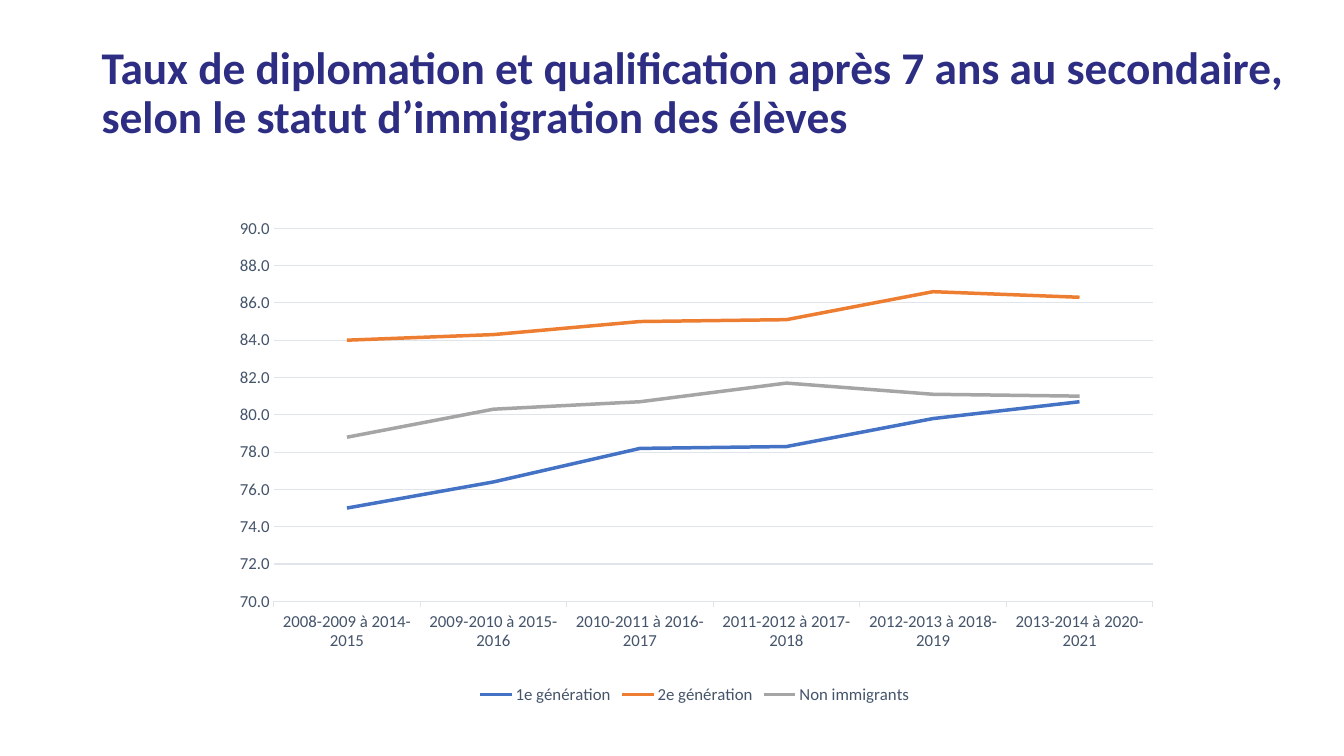
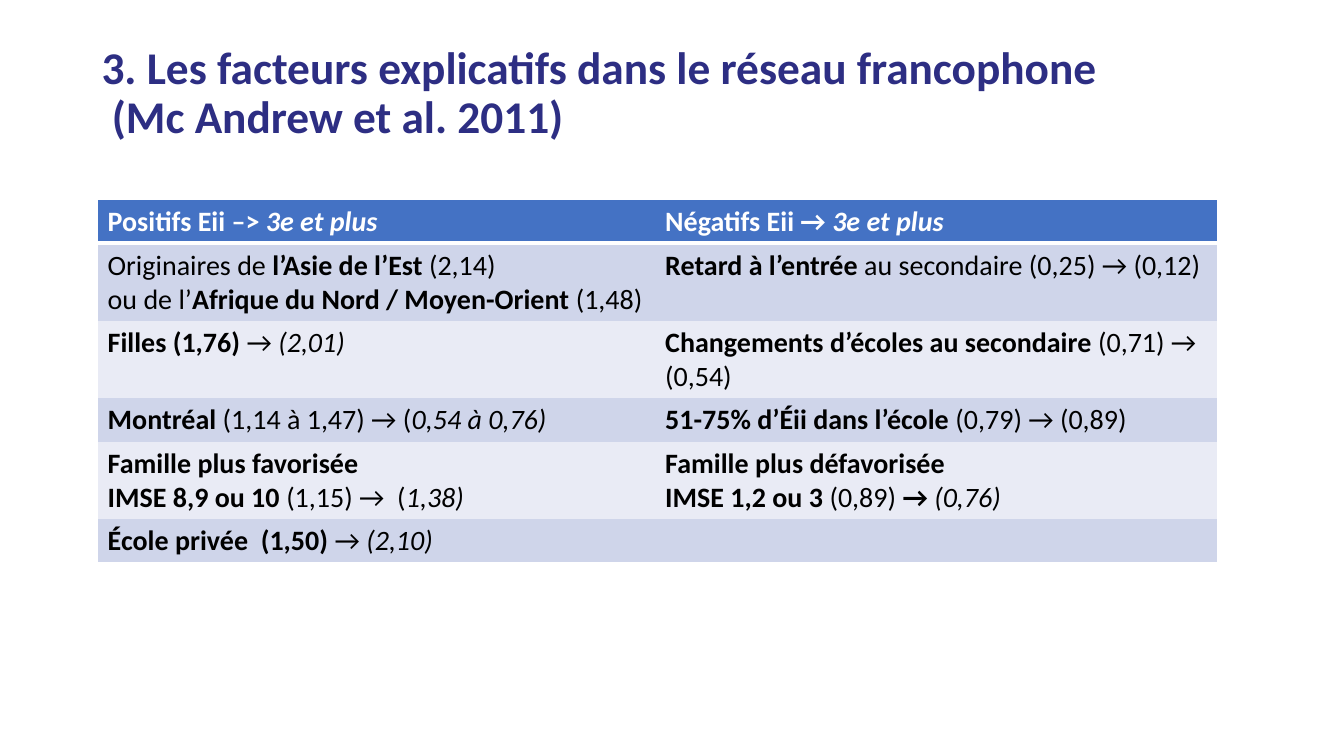
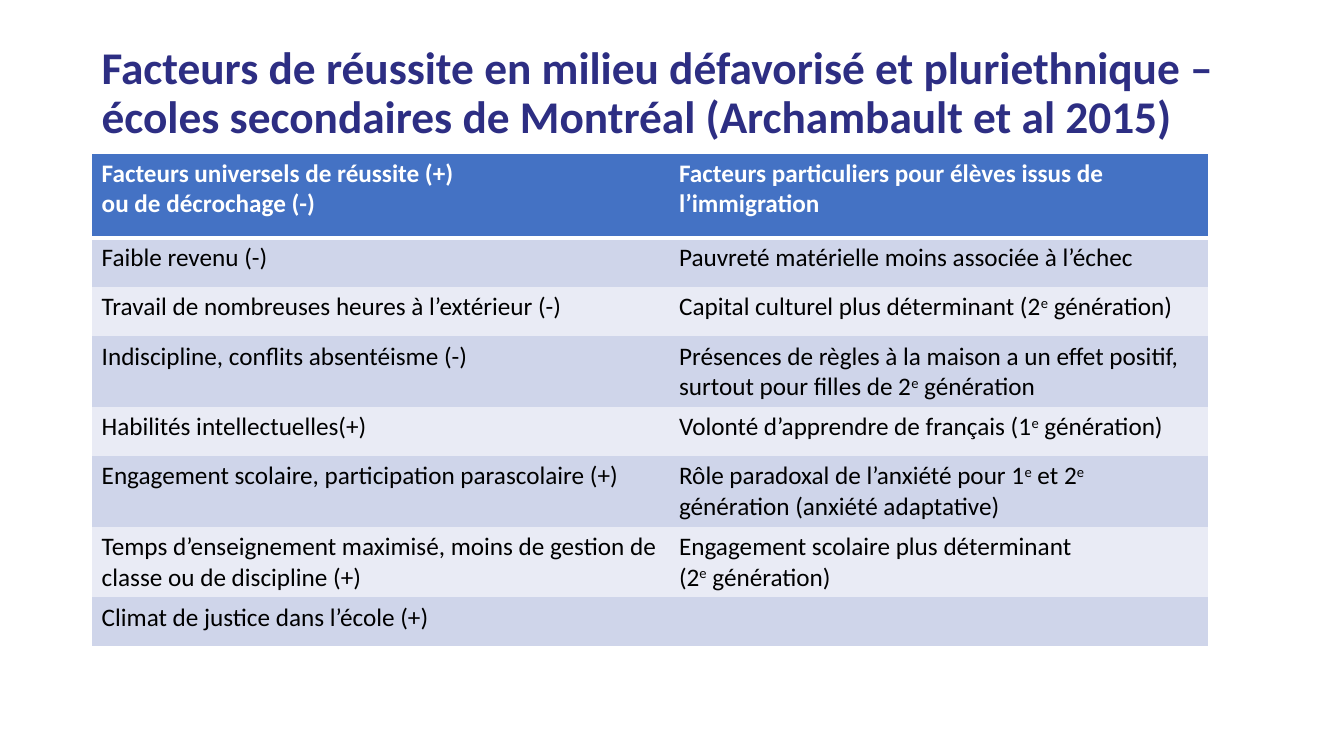
from dataclasses import dataclass
from typing import NamedTuple

import pptx
import pptx.chart.data
import pptx.dml.color
import pptx.enum.chart
import pptx.enum.text
import pptx.oxml
import pptx.oxml.ns
import pptx.util
from lxml import etree
from pptx.util import Cm, Pt

RGBColor = pptx.dml.color.RGBColor
qn = pptx.oxml.ns.qn

# Shared style
FONT = "Calibri"
INDIGO = RGBColor(0x2D, 0x2E, 0x83)
BLUE = RGBColor(0x44, 0x72, 0xC4)
ORANGE = RGBColor(0xED, 0x7D, 0x31)
GREY = RGBColor(0xA5, 0xA5, 0xA5)
SLATE = RGBColor(0x44, 0x54, 0x6A)
GRID = RGBColor(0xE0, 0xE5, 0xEB)
BAND_DARK = RGBColor(0xCF, 0xD5, 0xEA)
BAND_LIGHT = RGBColor(0xE9, 0xEB, 0xF5)
WHITE = RGBColor(0xFF, 0xFF, 0xFF)
BLACK = RGBColor(0, 0, 0)
TITLE_LEFT, TITLE_BOTTOM = Cm(2.31), Cm(3.73)
NO_TABLE_STYLE = "{2D5ABB26-0587-4C30-8999-92F81FD0307C}"


class Run(NamedTuple):
    text: str
    bold: bool = False
    italic: bool = False
    raised: bool = False


def bold(text: str) -> Run:
    return Run(text, bold=True)


def italic(text: str) -> Run:
    return Run(text, italic=True)


RANK = Run("e", raised=True)
Paragraph = list[Run]
Cell = list[Paragraph]


@dataclass
class TableSpec:
    left: float
    top: float
    column_widths: list[float]
    header_height: float
    row_height: float
    size: int
    rows: list[list[Cell]]


class Line(NamedTuple):
    name: str
    values: list[float]
    color: RGBColor


# Content
PERIODS = ["2008-2009 à 2014-2015", "2009-2010 à 2015-2016", "2010-2011 à 2016-2017",
           "2011-2012 à 2017-2018", "2012-2013 à 2018-2019", "2013-2014 à 2020-2021"]
RATES = [
    Line("1e génération", [75, 76.4, 78.2, 78.3, 79.8, 80.7], BLUE),
    Line("2e génération", [84, 84.3, 85, 85.1, 86.6, 86.3], ORANGE),
    Line("Non immigrants", [78.8, 80.3, 80.7, 81.7, 81.1, 81], GREY),
]

EXPLANATORY_FACTORS = TableSpec(2.46, 5.03, [14.05, 14.17], 1.04, 1.04, 20, [
    [[[Run("Positifs Eii –> "), italic("3e et plus")]],
     [[Run("Négatifs Eii → "), italic("3e et plus")]]],
    [[[Run("Originaires de "), bold("l’Asie de l’Est "), Run("(2,14)")],
      [Run("ou de l’"), bold("Afrique du Nord / Moyen-Orient "), Run("(1,48)")]],
     [[bold("Retard à l’entrée "), Run("au secondaire (0,25) → (0,12)")]]],
    [[[bold("Filles (1,76) "), Run("→"), italic(" (2,01)")]],
     [[bold("Changements d’écoles au secondaire "), Run("(0,71) → (0,54)")]]],
    [[[bold("Montréal"), Run(" (1,14 à 1,47) → ("), italic("0,54 à 0,76)")]],
     [[bold("51-75% d’Éii dans l’école "), Run("(0,79) → (0,89)")]]],
    [[[bold("Famille plus favorisée\nIMSE 8,9 ou 10 "), Run("(1,15) →  ("), italic("1,38)")]],
     [[bold("Famille plus défavorisée\nIMSE 1,2 ou 3 "), Run("(0,89) "), bold("→ "),
       italic("(0,76)")]]],
    [[[bold("École privée  (1,50) "), Run("→"), italic(" (2,10)")]], [[]]],
])

SUCCESS_FACTORS = TableSpec(2.31, 3.86, [14.55, 13.61], 2.13, 1.24, 18, [
    [[[Run("Facteurs universels de réussite (+)\nou de décrochage (-)")]],
     [[Run("Facteurs particuliers pour élèves issus de l’immigration")]]],
    [[[Run("Faible revenu (-)")]],
     [[Run("Pauvreté matérielle moins associée à l’échec")]]],
    [[[Run("Travail de nombreuses heures à l’extérieur (-)")]],
     [[Run("Capital culturel plus déterminant (2"), RANK, Run(" génération)")]]],
    [[[Run("Indiscipline, conflits absentéisme (-)")]],
     [[Run("Présences de règles à la maison a un effet positif, surtout pour filles de 2"),
       RANK, Run(" génération")]]],
    [[[Run("Habilités intellectuelles(+)")]],
     [[Run("Volonté d’apprendre de français (1"), RANK, Run(" génération)")]]],
    [[[Run("Engagement scolaire, participation parascolaire (+)")]],
     [[Run("Rôle paradoxal de l’anxiété pour 1"), RANK, Run(" et 2"), RANK,
       Run(" génération (anxiété adaptative)")]]],
    [[[Run("Temps d’enseignement maximisé, moins de gestion de classe ou de discipline (+)")]],
     [[Run("Engagement scolaire plus déterminant\n(2"), RANK, Run(" génération)")]]],
    [[[Run("Climat de justice dans l’école (+)")]], [[]]],
])


# Text
def style_font(font, size: float, color: RGBColor) -> None:
    font.name = FONT
    font.size = Pt(size)
    font.color.rgb = color


def write_runs(paragraph, runs: Paragraph, size: float, color: RGBColor,
               all_bold: bool = False) -> None:
    for part in runs:
        for index, text in enumerate(part.text.split("\n")):
            if index:
                paragraph.add_line_break()
            run = paragraph.add_run()
            run.text = text
            style_font(run.font, size, color)
            run.font.bold = all_bold or part.bold
            run.font.italic = part.italic
            if part.raised:
                run.font._element.set("baseline", "30000")


def add_titled_slide(deck, title: str, width: float = 29.21, height: float = 1.52):
    slide = deck.slides.add_slide(deck.slide_layouts[6])
    box = slide.shapes.add_textbox(TITLE_LEFT, TITLE_BOTTOM - Cm(height), Cm(width), Cm(height))
    frame = box.text_frame
    frame.word_wrap = True
    frame.vertical_anchor = pptx.enum.text.MSO_ANCHOR.BOTTOM
    frame.paragraphs[0].line_spacing = 0.9
    write_runs(frame.paragraphs[0], [bold(title)], 32.4, INDIGO)
    return slide


# Tables
def add_borders(cell, widths: dict[str, int]) -> None:
    properties = cell._tc.get_or_add_tcPr()
    for position, side in enumerate(s for s in "LRTB" if s in widths):
        border = etree.Element(qn(f"a:ln{side}"), w=str(Pt(widths[side])))
        fill = etree.SubElement(border, qn("a:solidFill"))
        etree.SubElement(fill, qn("a:srgbClr"), val=str(WHITE))
        properties.insert(position, border)


def add_factor_table(slide, spec: TableSpec) -> None:
    row_count, column_count = len(spec.rows), len(spec.column_widths)
    heights = [spec.header_height] + [spec.row_height] * (row_count - 1)
    table = slide.shapes.add_table(row_count, column_count, Cm(spec.left), Cm(spec.top),
                                   Cm(sum(spec.column_widths)), Cm(sum(heights))).table
    table._tbl.tblPr.find(qn("a:tableStyleId")).text = NO_TABLE_STYLE
    for column, width in zip(table.columns, spec.column_widths):
        column.width = Cm(width)
    for row_index, (contents, height) in enumerate(zip(spec.rows, heights)):
        table.rows[row_index].height = Cm(height)
        is_header = row_index == 0
        band = BLUE if is_header else BAND_DARK if row_index % 2 else BAND_LIGHT
        for column_index, paragraphs in enumerate(contents):
            cell = table.cell(row_index, column_index)
            cell.fill.solid()
            cell.fill.fore_color.rgb = band
            for index, runs in enumerate(paragraphs):
                frame = cell.text_frame
                paragraph = frame.add_paragraph() if index else frame.paragraphs[0]
                write_runs(paragraph, runs, spec.size, WHITE if is_header else BLACK, is_header)
            # White outer edge, thick rule under the header
            borders = {"L" if column_index == 0 else "R": 1}
            if is_header:
                borders |= {"T": 1, "B": 3}
            elif row_index == row_count - 1:
                borders["B"] = 1
            add_borders(cell, borders)


# Chart
def place_plot(chart, x: float, y: float, w: float, h: float) -> None:
    plot_area = chart.element.find(".//" + qn("c:plotArea"))
    for old_layout in plot_area.findall(qn("c:layout")):
        plot_area.remove(old_layout)
    layout = etree.Element(qn("c:layout"))
    manual = etree.SubElement(layout, qn("c:manualLayout"))
    settings = {"layoutTarget": "inner", "xMode": "edge", "yMode": "edge",
                "x": x, "y": y, "w": w, "h": h}
    for tag, value in settings.items():
        etree.SubElement(manual, qn(f"c:{tag}"), val=str(value))
    plot_area.insert(0, layout)


def style_line(line, color: RGBColor, width: float) -> None:
    line.color.rgb = color
    line.width = Pt(width)


def add_rate_chart(slide) -> None:
    data = pptx.chart.data.CategoryChartData(number_format="0.0")
    data.categories = PERIODS
    for rate in RATES:
        data.add_series(rate.name, rate.values)
    chart = slide.shapes.add_chart(pptx.enum.chart.XL_CHART_TYPE.LINE, Cm(5.72), Cm(4.98),
                                   Cm(23.57), Cm(12.88), data).chart
    style_font(chart.font, 10, BLACK)
    chart.has_title = False
    place_plot(chart, 0.05, 0.06, 0.94, 0.73)

    for series, rate in zip(chart.plots[0].series, RATES):
        series.smooth = False
        series.marker.style = pptx.enum.chart.XL_MARKER_STYLE.NONE
        style_line(series.format.line, rate.color, 2.5)

    periods, percent = chart.category_axis, chart.value_axis
    for axis in (periods, percent):
        style_font(axis.tick_labels.font, 12, SLATE)
    periods.major_tick_mark = pptx.enum.chart.XL_TICK_MARK.OUTSIDE
    style_line(periods.format.line, GRID, 0.75)
    percent.major_tick_mark = pptx.enum.chart.XL_TICK_MARK.NONE
    percent.minimum_scale, percent.maximum_scale, percent.major_unit = 70, 90, 2
    percent.tick_labels.number_format = "0.0"
    percent.tick_labels.number_format_is_linked = False
    percent.format.line.fill.background()
    style_line(percent.major_gridlines.format.line, GRID, 0.75)

    chart.has_legend = True
    chart.legend.position = pptx.enum.chart.XL_LEGEND_POSITION.BOTTOM
    chart.legend.include_in_layout = False
    style_font(chart.legend.font, 12, SLATE)


def main() -> None:
    deck = pptx.Presentation()
    deck.slide_width, deck.slide_height = Cm(33.87), Cm(19.05)

    rates = add_titled_slide(
        deck, "Taux de diplomation et qualification après 7 ans au secondaire,\n"
        "selon le statut d’immigration des élèves", width=30.81, height=2.79)
    add_rate_chart(rates)

    explanatory = add_titled_slide(
        deck, "3. Les facteurs explicatifs dans le réseau francophone\n (Mc Andrew et al. 2011)")
    add_factor_table(explanatory, EXPLANATORY_FACTORS)

    success = add_titled_slide(
        deck, "Facteurs de réussite en milieu défavorisé et pluriethnique – "
        "écoles secondaires de Montréal (Archambault et al 2015)")
    add_factor_table(success, SUCCESS_FACTORS)

    deck.save("out.pptx")


if __name__ == "__main__":
    main()
